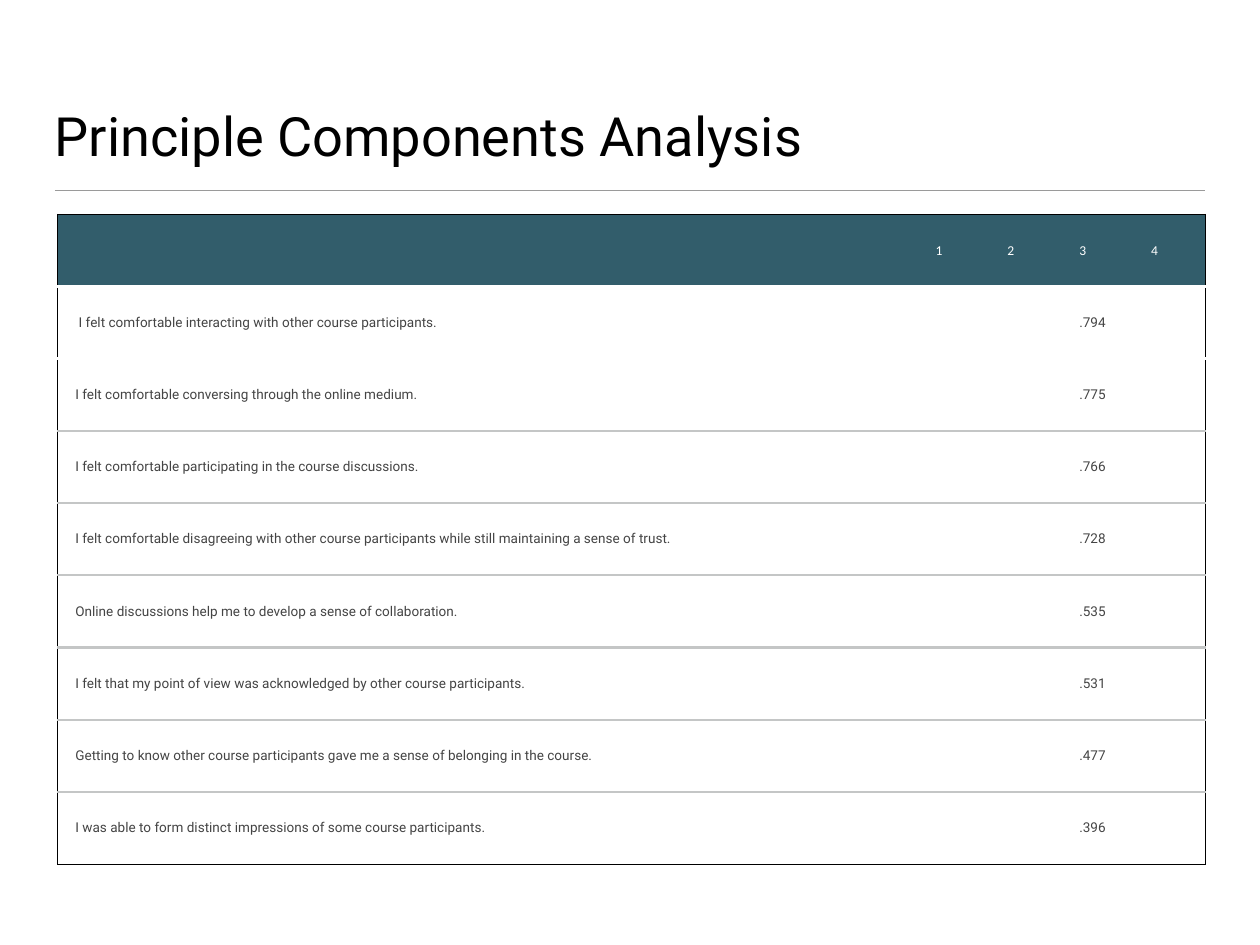
from typing import NamedTuple, Optional

from lxml import etree
from pptx import Presentation
from pptx.dml.color import RGBColor
from pptx.enum.shapes import MSO_CONNECTOR
from pptx.enum.text import MSO_ANCHOR
from pptx.oxml.ns import qn
from pptx.util import Cm, Pt

STRAIGHT = MSO_CONNECTOR.STRAIGHT
BOTTOM, MIDDLE = MSO_ANCHOR.BOTTOM, MSO_ANCHOR.MIDDLE

BLACK, WHITE, TEAL, GRAY = "000000", "FFFFFF", "325D6B", "444444"
LEFT, WIDTH = 1.57, 32.96
TABLE_LEFT, TABLE_TOP = 1.65, 6.15
COLUMN_WIDTHS = [24.66] + [2.06] * 4
ROW_HEIGHT = 2.07
PADDING, INDENT = 0.15, 0.36


class Border(NamedTuple):
    color: str
    points: float


class Item(NamedTuple):
    statement: str
    loading: str


FRAME, GAP, RULE = Border(BLACK, 1), Border(WHITE, 3), Border("C4C6C6", 2)

ITEMS = [
    Item(" I felt comfortable interacting with other course participants.", ".794"),
    Item("I felt comfortable conversing through the online medium.", ".775"),
    Item("I felt comfortable participating in the course discussions.", ".766"),
    Item("I felt comfortable disagreeing with other course participants "
         "while still maintaining a sense of trust.", ".728"),
    Item("Online discussions help me to develop a sense of collaboration.", ".535"),
    Item("I felt that my point of view was acknowledged by other course participants.", ".531"),
    Item("Getting to know other course participants gave me a sense of "
         "belonging in the course.", ".477"),
    Item("I was able to form distinct impressions of some course participants.", ".396"),
]
ROWS = [["", "1", "2", "3", "4"]] + [[i.statement, "", "", i.loading, ""] for i in ITEMS]
# Horizontal borders from the top edge of the table to its bottom edge
EDGES = [FRAME, GAP, GAP] + [RULE] * (len(ROWS) - 3) + [FRAME]


def rgb(color: str) -> RGBColor:
    return RGBColor.from_string(color)


def write(tf, text: str, *, size: float, color: str, font: str = "Roboto",
          indent: float = 0) -> None:
    p = tf.paragraphs[0]
    p._p.get_or_add_pPr().set("marL", str(Cm(indent)))
    r = p.add_run()
    r.text = text
    r.font.size, r.font.name = Pt(size), font
    r.font.color.rgb = rgb(color)


def set_border(cell, side: str, border: Optional[Border]) -> None:
    """Draw one side (L, R, T, B in that order); None leaves it without a line."""
    ln = etree.SubElement(cell._tc.get_or_add_tcPr(), qn(f"a:ln{side}"))
    if border is None:
        etree.SubElement(ln, qn("a:noFill"))
        return
    ln.set("w", str(Pt(border.points)))
    fill = etree.SubElement(ln, qn("a:solidFill"))
    etree.SubElement(fill, qn("a:srgbClr"), val=border.color)


def add_title(s, text: str) -> None:
    tf = s.shapes.add_textbox(Cm(LEFT), Cm(0.91), Cm(WIDTH), Cm(3.89)).text_frame
    tf.word_wrap = True
    tf.vertical_anchor = BOTTOM
    tf.margin_left = tf.margin_right = tf.margin_top = tf.margin_bottom = 0
    write(tf, text, size=44, color=BLACK)


def add_title_rule(s) -> None:
    y = Cm(5.46)
    line = s.shapes.add_connector(STRAIGHT, Cm(LEFT), y, Cm(LEFT + WIDTH), y)
    line.line.color.rgb = rgb("9A9A9A")
    line.line.width = Pt(1)
    etree.SubElement(line._element.spPr, qn("a:effectLst"))


def format_cell(cell, row: int, col: int) -> None:
    last = len(COLUMN_WIDTHS) - 1
    set_border(cell, "L", FRAME if col == 0 else None)
    set_border(cell, "R", FRAME if col == last else None)
    set_border(cell, "T", EDGES[row])
    set_border(cell, "B", EDGES[row + 1])
    if row == 0:
        cell.fill.solid()
        cell.fill.fore_color.rgb = rgb(TEAL)
    else:
        cell.fill.background()
    cell.vertical_anchor = MIDDLE
    cell.margin_left = cell.margin_right = Cm(PADDING)
    cell.margin_top = cell.margin_bottom = Cm(PADDING)


def add_loadings_table(s) -> None:
    table = s.shapes.add_table(
        len(ROWS), len(COLUMN_WIDTHS), Cm(TABLE_LEFT), Cm(TABLE_TOP),
        Cm(sum(COLUMN_WIDTHS)), Cm(ROW_HEIGHT * len(ROWS))).table
    table.first_row = table.horz_banding = False
    for column, width in zip(table.columns, COLUMN_WIDTHS):
        column.width = Cm(width)
    for row, texts in enumerate(ROWS):
        table.rows[row].height = Cm(ROW_HEIGHT)
        color, font = (WHITE, "Calibri") if row == 0 else (GRAY, "Roboto")
        for col, text in enumerate(texts):
            cell = table.cell(row, col)
            format_cell(cell, row, col)
            if text:
                write(cell.text_frame, text, size=11, color=color, font=font, indent=INDENT)


def main() -> None:
    prs = Presentation()
    prs.slide_width, prs.slide_height = Cm(36.12), Cm(27.1)
    s = prs.slides.add_slide(prs.slide_layouts[6])
    add_title_rule(s)
    add_title(s, "Principle Components Analysis")
    add_loadings_table(s)
    prs.save("out.pptx")


if __name__ == "__main__":
    main()
